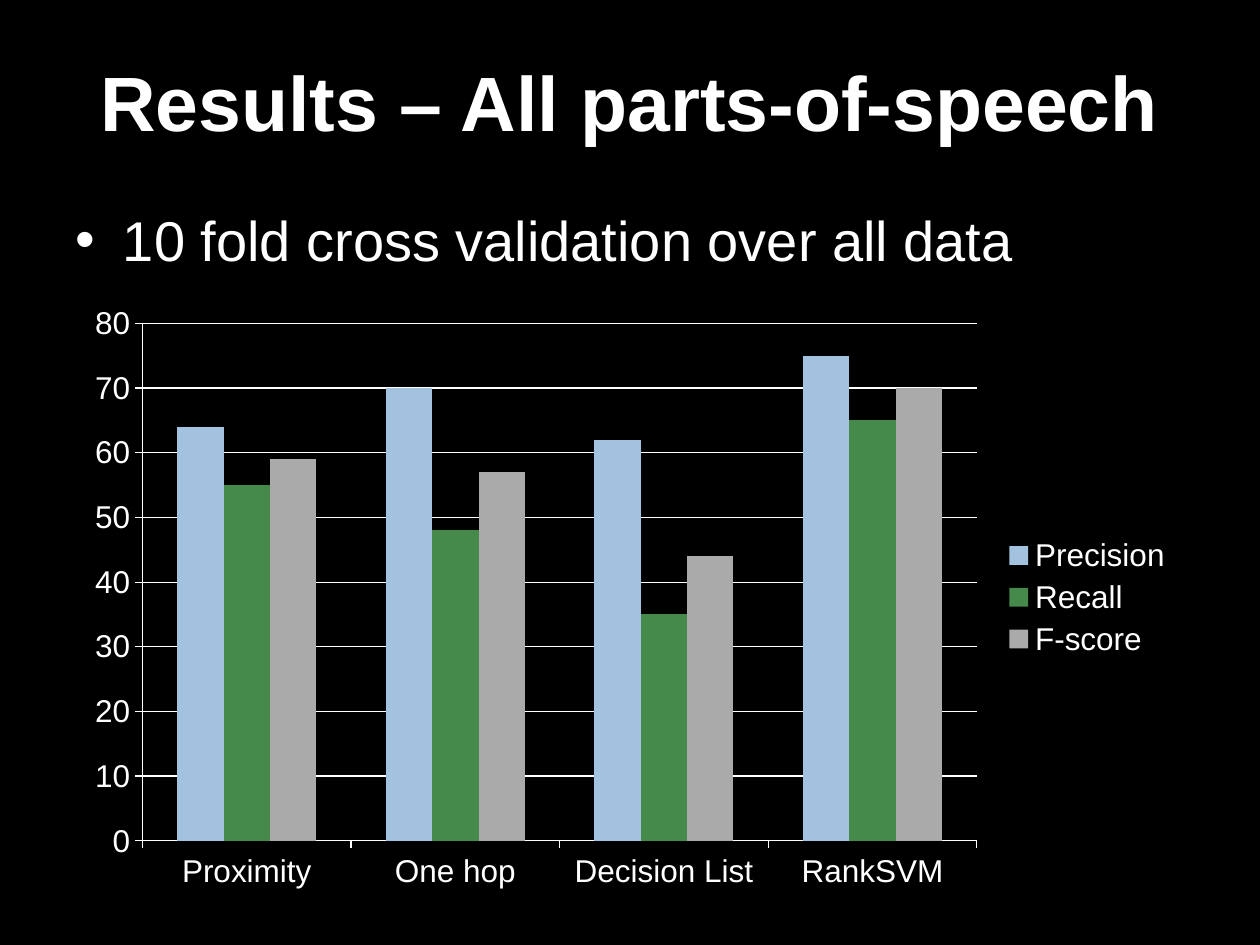
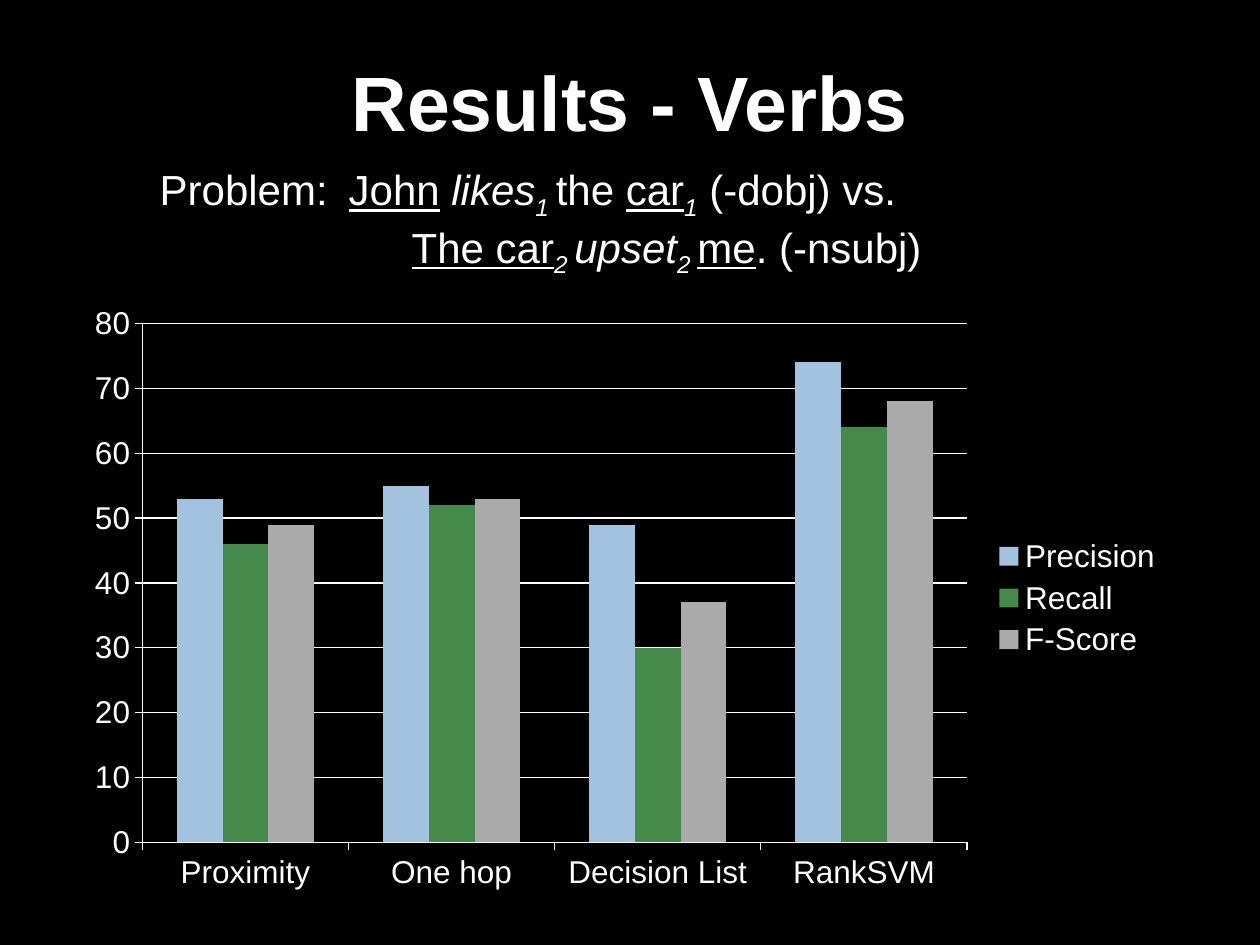
from pptx import Presentation
from pptx import util as u
from pptx.chart.data import CategoryChartData
from pptx.dml.color import RGBColor
from pptx.enum import chart as ch, text as tx

Cm, Pt = u.Cm, u.Pt
TITLE_AND_CONTENT, TITLE_ONLY = 1, 5
METHODS = ["Proximity", "One hop", "Decision List", "RankSVM"]


def color(hex_code):
    return RGBColor.from_string(hex_code)


class Deck:
    FONT = "Arial"
    INK = color("FFFFFF")
    BACKGROUND = color("000000")
    SERIES = [color(c) for c in ("A3C2E0", "468A4B", "AAAAAA")]

    def __init__(self):
        self.prs = Presentation()
        self.prs.slide_width, self.prs.slide_height = Cm(25.4), Cm(19.05)
        fill = self.prs.slide_master.background.fill
        fill.solid()
        fill.fore_color.rgb = self.BACKGROUND
        self.slide = None

    def style(self, font, size, bold=False):
        font.name, font.size, font.bold = self.FONT, Pt(size), bold
        font.color.rgb = self.INK

    def fill_placeholder(self, holder, words, box, size, bold=False):
        holder.left, holder.top, holder.width, holder.height = map(Cm, box)
        holder.text_frame.text = words
        holder.text_frame.auto_size = tx.MSO_AUTO_SIZE.NONE
        self.style(holder.text_frame.paragraphs[0].runs[0].font, size, bold)

    def new_slide(self, layout, title):
        self.slide = self.prs.slides.add_slide(self.prs.slide_layouts[layout])
        self.fill_placeholder(self.slide.shapes.title, title,
                              (1.27, 0.43, 22.86, 3.18), 44, bold=True)

    def bullet(self, words):
        self.fill_placeholder(self.slide.placeholders[1], words,
                              (1.27, 4.01, 23.5, 5.51), 32)

    def example(self, lines, box, size=24):
        """Add lines of (words, marks); marks are u underline, i italic, s subscript."""
        frame = self.slide.shapes.add_textbox(*map(Cm, box)).text_frame
        frame.word_wrap = True
        for number, (indent, pieces) in enumerate(lines):
            line = frame.add_paragraph() if number else frame.paragraphs[0]
            line._p.get_or_add_pPr().set("marL", str(Cm(indent)))
            for words, marks in pieces:
                run = line.add_run()
                run.text = words
                self.style(run.font, size)
                run.font.underline = "u" in marks
                run.font.italic = "i" in marks
                if "s" in marks:
                    run._r.get_or_add_rPr().set("baseline", "-25000")

    def column_chart(self, scores, box, size=18):
        data = CategoryChartData()
        data.categories = METHODS
        for measure, values in scores.items():
            data.add_series(measure, values)
        chart = self.slide.shapes.add_chart(
            ch.XL_CHART_TYPE.COLUMN_CLUSTERED, *map(Cm, box), data).chart
        self.style(chart.font, size)
        chart.has_title = False
        chart.has_legend = True
        chart.legend.position = ch.XL_LEGEND_POSITION.RIGHT
        chart.legend.include_in_layout = False
        self.style(chart.legend.font, size)

        plot = chart.plots[0]
        plot.gap_width, plot.overlap, plot.vary_by_categories = 150, 0, False
        for series, tint in zip(plot.series, self.SERIES):
            series.format.fill.solid()
            series.format.fill.fore_color.rgb = tint

        scale = chart.value_axis
        scale.minimum_scale, scale.maximum_scale, scale.major_unit = 0, 80, 10
        scale.has_major_gridlines = True
        for axis in (chart.category_axis, scale):
            axis.major_tick_mark = ch.XL_TICK_MARK.OUTSIDE
            self.style(axis.tick_labels.font, size)
        for line in (chart.category_axis.format.line, scale.format.line,
                     scale.major_gridlines.format.line):
            line.color.rgb = self.INK
            line.width = Pt(0.75)


def main():
    deck = Deck()

    deck.new_slide(TITLE_AND_CONTENT, "Results – All parts-of-speech")
    deck.bullet("10 fold cross validation over all data")
    deck.column_chart({"Precision": (64, 70, 62, 75),
                       "Recall": (55, 48, 35, 65),
                       "F-score": (59, 57, 44, 70)},
                      (1.47, 5.92, 22.43, 12.24))

    deck.new_slide(TITLE_ONLY, "Results - Verbs")
    deck.example([
        (0, [("Problem: \t", ""), ("John", "u"), (" ", ""), ("likes", "i"),
             ("1 ", "is"), ("the ", ""), ("car", "u"), ("1", "is"),
             (" (-dobj) vs.", "")]),
        (5.08, [("The car", "u"), ("2 ", "is"), ("upset", "i"), ("2 ", "is"),
                ("me", "u"), (". (-nsubj)", "")]),
    ], (2.97, 3.18, 17.12, 3.33))
    deck.column_chart({"Precision": (53, 55, 49, 74),
                       "Recall": (46, 52, 30, 64),
                       "F-Score": (49, 53, 37, 68)},
                      (1.47, 5.92, 22.23, 12.27))

    deck.prs.save("out.pptx")


if __name__ == "__main__":
    main()
